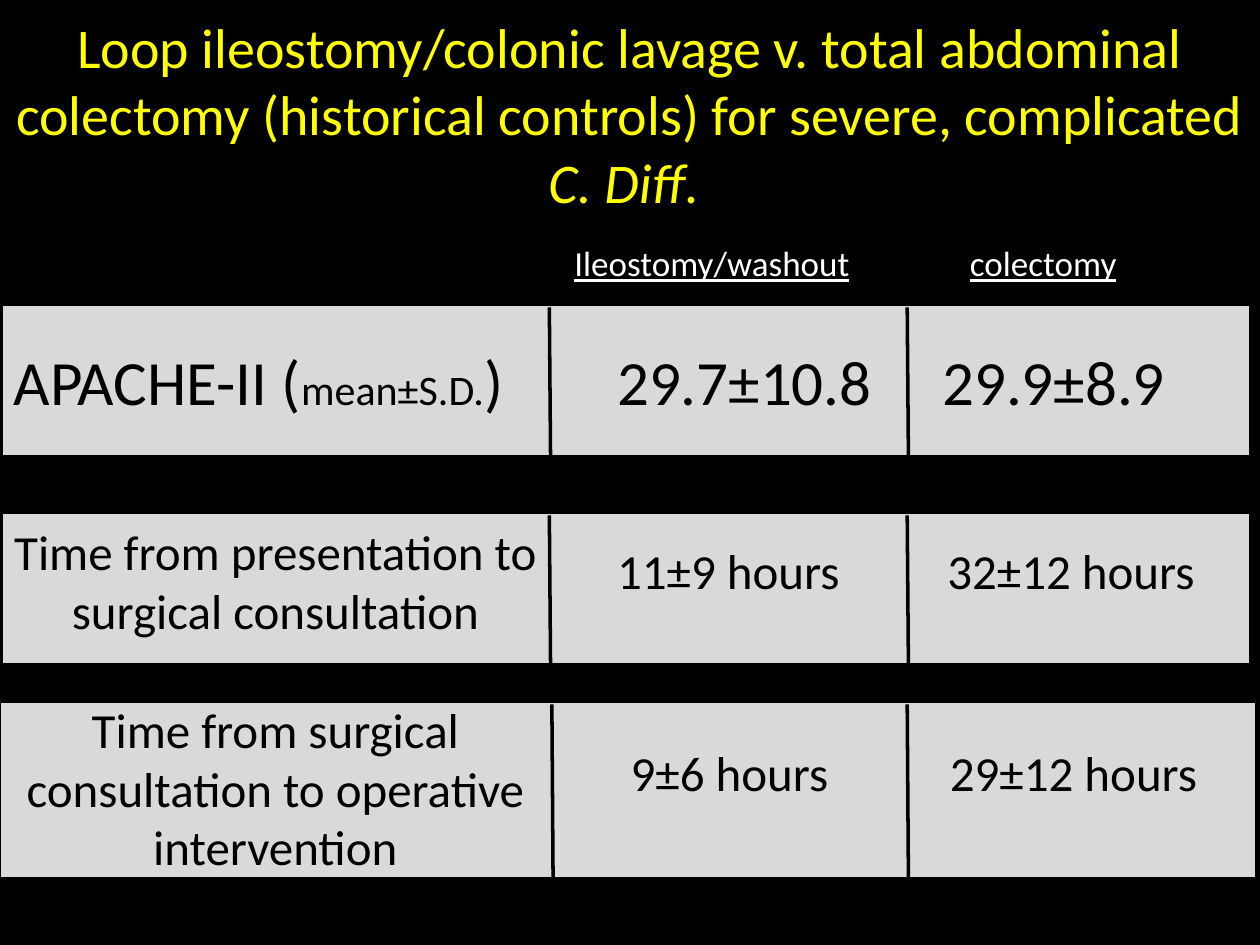
from lxml.etree import SubElement
from pptx import Presentation
from pptx.dml.color import RGBColor
from pptx.enum.shapes import MSO_CONNECTOR, MSO_SHAPE
from pptx.enum.text import MSO_ANCHOR, PP_ALIGN
from pptx.oxml.ns import qn
from pptx.util import Inches, Pt

COLORS = {"black": "000000", "title": "FFFF00", "header": "FFFFFF", "band": "D9D9D9"}
FONT = "Calibri"

TITLE = [
    ("Loop ileostomy/colonic lavage v. total abdominal colectomy "
     "(historical controls) for severe, complicated ", False),
    ("C. Diff", True),
    (". ", False),
]
HEADERS = [("Ileostomy/washout", 4.46, 2.52), ("colectomy", 7.6, 1.46)]

# Band: left, top, width, height, then the x of each divider
BANDS = [
    (0.01, 2.41, 9.92, 1.22, (4.36, 7.2)),
    (0.01, 4.06, 9.92, 1.22, (4.36, 7.2)),
    (-0.01, 5.56, 9.99, 1.42, (4.38, 7.2)),
]
SCORE_RUNS = [("APACHE-II (", 36), ("mean±S.D.", 24), (")\t29.7±10.8\t29.9±8.9", 36)]
SCORE_TABS = (4.79, 7.37)

# Row: label, label top, label height, values, values top, x of each value
TIME_ROWS = [
    ("Time from presentation to surgical consultation", 4.09, 1.04,
     ("11±9 hours", "32±12 hours"), 4.24, (4.36, 7.08)),
    ("Time from surgical consultation to operative intervention", 5.5, 1.51,
     ("9±6 hours", "29±12 hours"), 5.84, (4.37, 7.1)),
]
LABEL_LEFT, LABEL_WIDTH = 0.01, 4.35
VALUE_WIDTH, VALUE_HEIGHT = 2.84, 0.57


def color(name):
    return RGBColor.from_string(COLORS[name])


def format_run(run, size, color_name):
    run.font.name = FONT
    run.font.size = Pt(size)
    run.font.color.rgb = color(color_name)


def add_text(slide, text, left, top, width, height, size, color_name,
             align=PP_ALIGN.CENTER, wrap=True, underline=False):
    box = slide.shapes.add_textbox(*map(Inches, (left, top, width, height)))
    box.text_frame.word_wrap = wrap
    paragraph = box.text_frame.paragraphs[0]
    paragraph.text = text
    paragraph.alignment = align
    format_run(paragraph.runs[0], size, color_name)
    if underline:
        paragraph.runs[0].font.underline = True


def add_band(slide, left, top, width, height, dividers):
    band = slide.shapes.add_shape(
        MSO_SHAPE.RECTANGLE, *map(Inches, (left, top, width, height)))
    band.shadow.inherit = False
    band.fill.solid()
    band.fill.fore_color.rgb = color("band")
    band.line.color.rgb = color("black")
    band.line.width = Pt(2.5)
    for x in dividers:
        line_top = top + 0.03
        divider = slide.shapes.add_connector(
            MSO_CONNECTOR.STRAIGHT,
            *map(Inches, (x, line_top, x + 0.01, line_top + height)))
        divider.line.color.rgb = color("black")
        divider.line.width = Pt(2)
        SubElement(divider._element.spPr, qn("a:effectLst"))
    return band


def fill_score_band(band):
    """Write the score row on one line, its values set at tab stops."""
    band.text_frame.vertical_anchor = MSO_ANCHOR.MIDDLE
    paragraph = band.text_frame.paragraphs[0]
    paragraph.alignment = PP_ALIGN.LEFT
    tab_list = SubElement(paragraph._p.get_or_add_pPr(), qn("a:tabLst"))
    for position in SCORE_TABS:
        SubElement(tab_list, qn("a:tab"), pos=str(Inches(position)), algn="l")
    for text, size in SCORE_RUNS:
        run = paragraph.add_run()
        run.text = text
        format_run(run, size, "black")


def add_title(slide):
    title = slide.shapes.title
    title.left, title.top, title.width, title.height = map(Inches, (0, 0.05, 10, 2.26))
    title.text_frame.vertical_anchor = MSO_ANCHOR.TOP
    paragraph = title.text_frame.paragraphs[0]
    paragraph.alignment = PP_ALIGN.CENTER
    for text, italic in TITLE:
        run = paragraph.add_run()
        run.text = text
        run.font.italic = italic
        format_run(run, 32, "title")


def main():
    presentation = Presentation()
    presentation.slide_width, presentation.slide_height = Inches(10), Inches(7.5)
    slide = presentation.slides.add_slide(presentation.slide_layouts[5])
    slide.background.fill.solid()
    slide.background.fill.fore_color.rgb = color("black")

    add_title(slide)
    bands = [add_band(slide, *band) for band in BANDS]
    fill_score_band(bands[0])
    for text, left, width in HEADERS:
        add_text(slide, text, left, 1.87, width, 0.44, 20, "header",
                 align=PP_ALIGN.LEFT, wrap=False, underline=True)
    for label, label_top, label_height, values, value_top, lefts in TIME_ROWS:
        add_text(slide, label, LABEL_LEFT, label_top, LABEL_WIDTH, label_height,
                 28, "black")
        for value, left in zip(values, lefts):
            add_text(slide, value, left, value_top, VALUE_WIDTH, VALUE_HEIGHT,
                     28, "black")
    presentation.save("out.pptx")


if __name__ == "__main__":
    main()
